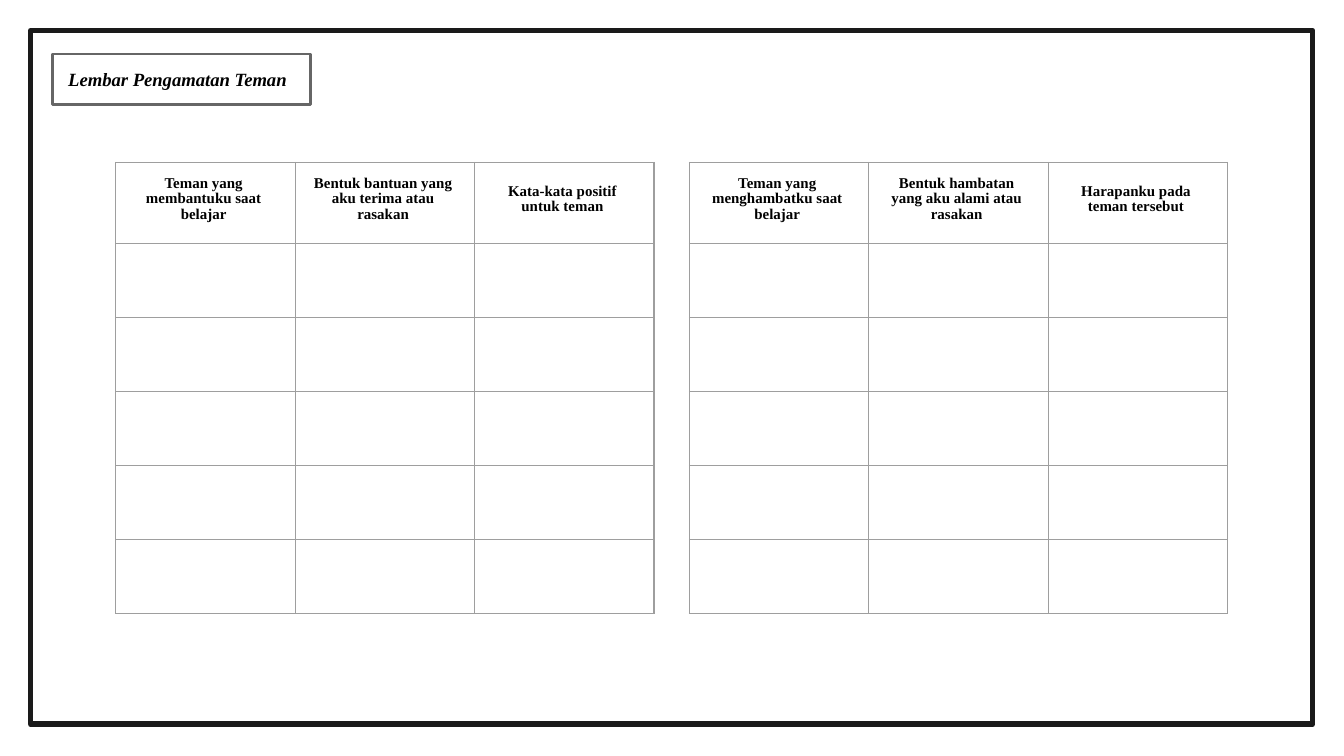
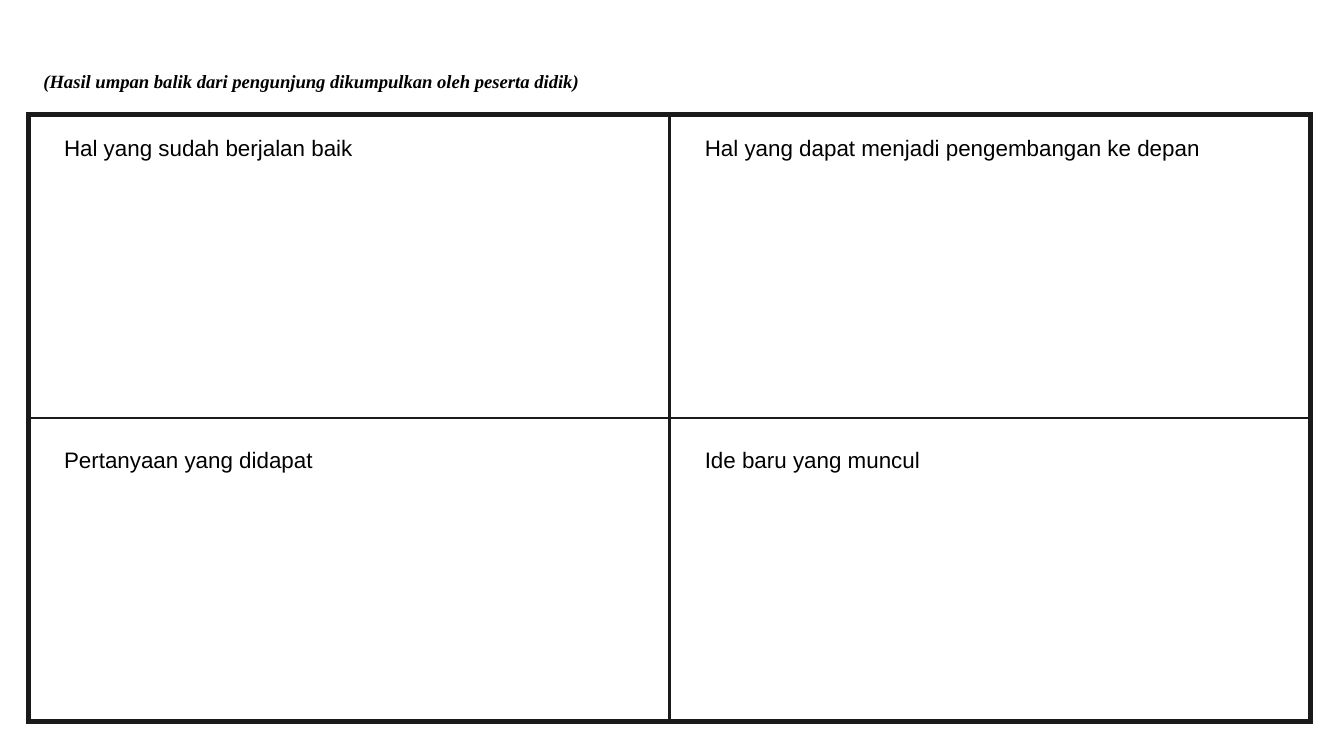
from dataclasses import dataclass

from lxml import etree
from pptx import Presentation
from pptx.dml.color import RGBColor
from pptx.enum.shapes import MSO_SHAPE
from pptx.enum.text import MSO_AUTO_SIZE, PP_ALIGN
from pptx.oxml.ns import qn
from pptx.util import Cm, Pt

RECTANGLE = MSO_SHAPE.RECTANGLE
GROW = MSO_AUTO_SIZE.SHAPE_TO_FIT_TEXT
LEFT, CENTER = PP_ALIGN.LEFT, PP_ALIGN.CENTER

SHEET_TITLE = "Lembar Pengamatan Teman"
OBSERVATIONS = [
    ["Teman yang membantuku saat belajar",
     "Bentuk bantuan yang aku terima atau rasakan",
     "Kata-kata positif untuk teman"],
    ["Teman yang menghambatku saat belajar",
     "Bentuk hambatan yang aku alami atau rasakan",
     "Harapanku pada teman tersebut"],
]
EMPTY_ROWS = 5

FEEDBACK_TITLE = "(Hasil umpan balik dari pengunjung dikumpulkan oleh peserta didik)"
FEEDBACK = [
    ["Hal yang sudah berjalan baik", "Hal yang dapat menjadi pengembangan ke depan"],
    ["Pertanyaan yang didapat", "Ide baru yang muncul"],
]


@dataclass(frozen=True)
class Theme:
    ink: str = "000000"
    frame: str = "1A1A1A"
    tag: str = "666666"
    rule: str = "9E9E9E"
    serif: str = "Times New Roman"
    sans: str = "Arial"
    title_size: float = 10
    header_size: float = 8
    prompt_size: float = 12
    thick: float = 3
    medium: float = 1.5
    thin: float = 0.75


THEME = Theme()
TITLE_STYLE = {"size": THEME.title_size, "bold": True, "italic": True}


def write(frame, text, font=THEME.serif, size=10, bold=False, italic=False,
          align=LEFT, spacing=1.0):
    frame.word_wrap = True
    para = frame.paragraphs[0]
    para.alignment = align
    para.line_spacing = spacing
    span = para.add_run()
    span.text = text
    span.font.name = font
    span.font.size = Pt(size)
    span.font.bold = bold
    span.font.italic = italic
    span.font.color.rgb = RGBColor.from_string(THEME.ink)


def pad(holder, left=0, top=0, right=0):
    """Set the insets, in cm, of a text frame or a table cell."""
    holder.margin_left, holder.margin_top = Cm(left), Cm(top)
    holder.margin_right, holder.margin_bottom = Cm(right), Cm(0)


def add_outline(slide, place, color, weight):
    box = slide.shapes.add_shape(RECTANGLE, *map(Cm, place))
    box.shadow.inherit = False
    box.fill.background()
    box.line.color.rgb = RGBColor.from_string(color)
    box.line.width = Pt(weight)
    return box


def add_title(box, text, left, top):
    frame = box.text_frame
    frame.vertical_anchor = 1
    pad(frame, left, top)
    write(frame, text, **TITLE_STYLE)
    frame.auto_size = GROW


def add_border(cell, side, color, weight):
    line = etree.SubElement(cell._tc.get_or_add_tcPr(), qn("a:ln" + side),
                            w=str(Pt(weight)), cmpd="sng")
    fill = etree.SubElement(line, qn("a:solidFill"))
    etree.SubElement(fill, qn("a:srgbClr"), val=color)
    etree.SubElement(line, qn("a:prstDash"), val="solid")


def add_grid(slide, left, top, widths, heights, color, outer, inner):
    """Add a plain table whose outer and inner rules may differ in weight."""
    rows, columns = len(heights), len(widths)
    table = slide.shapes.add_table(rows, columns, Cm(left), Cm(top),
                                   Cm(sum(widths)), Cm(sum(heights))).table
    table.first_row = table.horz_banding = False
    for column, width in zip(table.columns, widths):
        column.width = Cm(width)
    for row, height in zip(table.rows, heights):
        row.height = Cm(height)
    for r in range(rows):
        for c in range(columns):
            cell = table.cell(r, c)
            on_edge = {"L": c == 0, "R": c == columns - 1,
                       "T": r == 0, "B": r == rows - 1}
            for side, edge in on_edge.items():
                add_border(cell, side, color, outer if edge else inner)
            cell.fill.background()
    return table


def build_observation_sheet(slide):
    add_outline(slide, (0.58, 0.58, 24.23, 13.11), THEME.frame, THEME.thick)
    tag = add_outline(slide, (0.99, 1.02, 4.88, 0.95), THEME.tag, THEME.medium)
    add_title(tag, SHEET_TITLE, left=0.3, top=0.26)

    left, top, column, gap = 2.19, 3.07, 3.39, 0.67
    heights = [1.53] + [1.4] * EMPTY_ROWS
    for headers in OBSERVATIONS:
        widths = [column] * len(headers)
        table = add_grid(slide, left, top, widths, heights,
                         THEME.rule, THEME.thin, THEME.thin)
        for index, header in enumerate(headers):
            cell = table.cell(0, index)
            last = index == len(headers) - 1
            pad(cell, left=0.3, top=0.4 if last else 0.25, right=0.37)
            write(cell.text_frame, header, size=THEME.header_size, bold=True,
                  align=CENTER, spacing=0.95)
        left += sum(widths) + gap


def build_feedback_grid(slide):
    table = add_grid(slide, 0.54, 2.16, [12.11] * 2, [5.74] * 2,
                     THEME.frame, THEME.thick, THEME.medium)
    for r, (prompts, inset) in enumerate(zip(FEEDBACK, (0.41, 0.57))):
        for c, prompt in enumerate(prompts):
            cell = table.cell(r, c)
            pad(cell, left=0.67, top=inset)
            write(cell.text_frame, prompt, font=THEME.sans, size=THEME.prompt_size)

    caption = slide.shapes.add_textbox(Cm(0.79), Cm(1.3), Cm(10.46), Cm(0.48))
    add_title(caption, FEEDBACK_TITLE, left=0.03, top=0.03)


def main():
    deck = Presentation()
    deck.slide_width, deck.slide_height = Cm(25.4), Cm(14.29)
    blank = deck.slide_layouts[6]
    for build in (build_observation_sheet, build_feedback_grid):
        build(deck.slides.add_slide(blank))
    deck.save("out.pptx")


if __name__ == "__main__":
    main()
